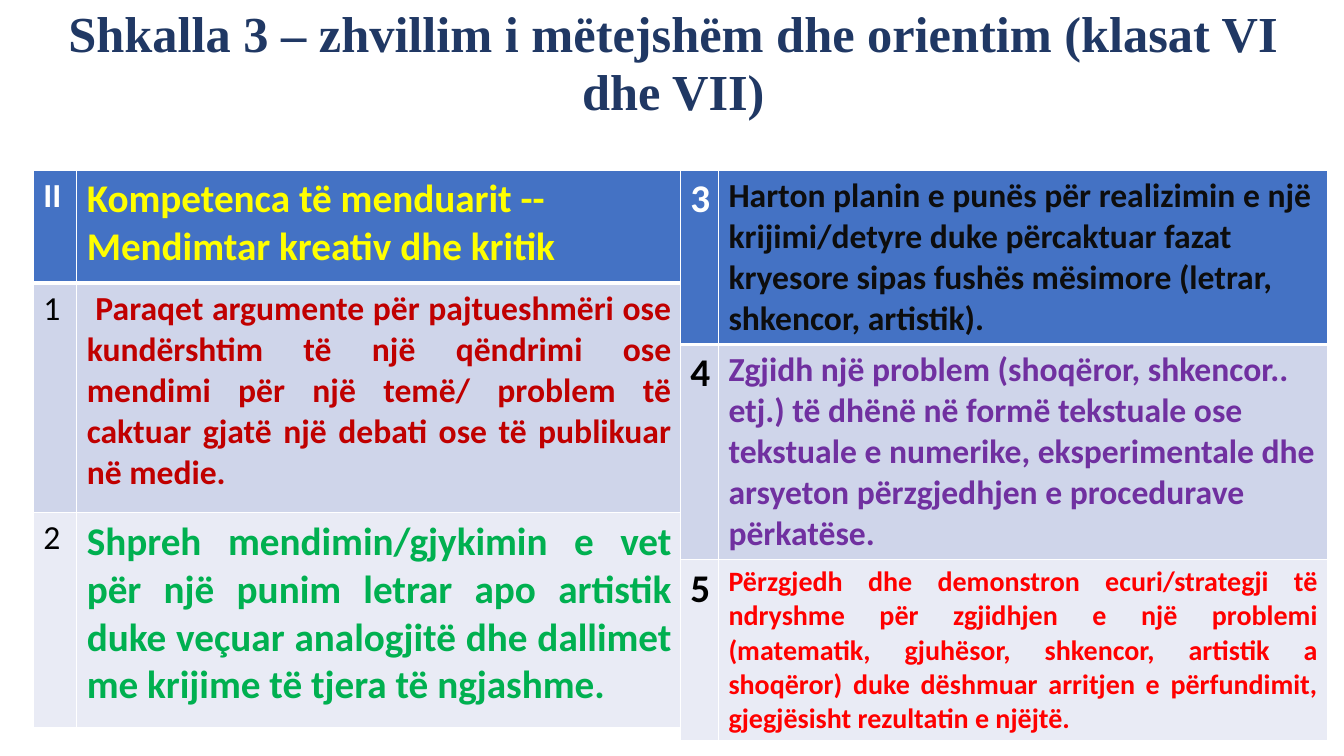
from lxml.etree import SubElement as Sub
from pptx import Presentation
from pptx.dml.color import RGBColor as RGB
from pptx.enum.text import MSO_ANCHOR as Anchor, PP_ALIGN as Align
from pptx.oxml.ns import qn
from pptx.util import Pt

NAVY = RGB(0x20, 0x38, 0x64)
WHITE = RGB(0xFF, 0xFF, 0xFF)
BLACK = RGB(0, 0, 0)
INK = RGB(0x0D, 0x0D, 0x0D)
YELLOW = RGB(0xFF, 0xFF, 0)
MAROON = RGB(0xC0, 0, 0)
GREEN = RGB(0, 0xB0, 0x50)
PURPLE = RGB(0x70, 0x30, 0xA0)
RED = RGB(0xFF, 0, 0)
FILLS = [RGB(0x44, 0x72, 0xC4), RGB(0xCF, 0xD5, 0xEA), RGB(0xE9, 0xEB, 0xF5)]

TITLE = "Shkalla 3 – zhvillim i mëtejshëm dhe orientim (klasat VI dhe VII)"
TOP = 121.7
LEFT, JUST = Align.LEFT, Align.JUSTIFY

TABLES = [
    (23.8, (31, 432), (80.7, 164, 153.4), [
        (("II", 24, WHITE, True, LEFT),
         ("Kompetenca të menduarit -- Mendimtar kreativ dhe kritik",
          28, YELLOW, True, LEFT)),
        (("1", 24, BLACK, False, LEFT),
         (" Paraqet argumente për pajtueshmëri ose kundërshtim të një "
          "qëndrimi ose mendimi për një temë/ problem të caktuar gjatë "
          "një debati ose të publikuar në medie.",
          24, MAROON, True, JUST)),
        (("2", 24, BLACK, False, LEFT),
         ("Shpreh mendimin/gjykimin e vet për një punim letrar apo "
          "artistik duke veçuar analogjitë dhe dallimet me krijime të "
          "tjera të ngjashme.",
          28, GREEN, True, JUST)),
    ]),
    (486, (27.2, 435.3), (124.4, 153.7, 129.5), [
        (("3", 28, WHITE, True, LEFT),
         ("Harton planin e punës për realizimin e një krijimi/detyre duke "
          "përcaktuar fazat kryesore sipas fushës mësimore (letrar, "
          "shkencor, artistik).",
          24, INK, True, LEFT)),
        (("4", 28, BLACK, True, LEFT),
         ("Zgjidh një problem (shoqëror, shkencor.. etj.) të dhënë në "
          "formë tekstuale ose tekstuale e numerike, eksperimentale dhe "
          "arsyeton përzgjedhjen e procedurave përkatëse.",
          24, PURPLE, True, LEFT)),
        (("5", 28, BLACK, True, LEFT),
         ("Përzgjedh dhe demonstron ecuri/strategji të ndryshme për "
          "zgjidhjen e një problemi (matematik, gjuhësor, shkencor, "
          "artistik a shoqëror) duke dëshmuar arritjen e përfundimit, "
          "gjegjësisht rezultatin e njëjtë.",
          20, RED, True, JUST)),
    ]),
]


def write(frame, text, size, color, bold, align, face="Calibri"):
    frame.text = text
    para = frame.paragraphs[0]
    para.alignment = align
    font = para.runs[0].font
    font.name, font.size, font.bold = face, Pt(size), bold
    font.color.rgb = color
    return para


def edge(cell, row):
    props = cell._tc.get_or_add_tcPr()
    thick = {"lnL": 1, "lnR": 1, "lnT": 3 if row == 1 else 1,
             "lnB": 3 if row == 0 else 1}
    for tag, width in thick.items():
        line = Sub(props, qn("a:" + tag), w=str(Pt(width)))
        fill = Sub(line, qn("a:solidFill"))
        Sub(fill, qn("a:srgbClr"), val=str(WHITE))


def draw(slide, left, cols, rows, cells):
    table = slide.shapes.add_table(len(rows), len(cols), Pt(left), Pt(TOP),
                                   Pt(sum(cols)), Pt(sum(rows))).table
    for col, width in zip(table.columns, cols):
        col.width = Pt(width)
    for r, (height, items) in enumerate(zip(rows, cells)):
        table.rows[r].height = Pt(height)
        for c, item in enumerate(items):
            cell = table.cell(r, c)
            write(cell.text_frame, *item)
            edge(cell, r)
            cell.fill.solid()
            cell.fill.fore_color.rgb = FILLS[r]


deck = Presentation()
deck.slide_width, deck.slide_height = Pt(960), Pt(540)
slide = deck.slides.add_slide(deck.slide_layouts[6])

frame = slide.shapes.add_textbox(Pt(11.5), Pt(11.5), Pt(939), Pt(74)).text_frame
frame.word_wrap = True
frame.vertical_anchor = Anchor.MIDDLE
frame.margin_top, frame.margin_bottom = Pt(0), Pt(5)
head = write(frame, TITLE, 36, NAVY, True, Align.CENTER, "Times New Roman")
head.line_spacing = 0.95

for spec in TABLES:
    draw(slide, *spec)

deck.save("out.pptx")
